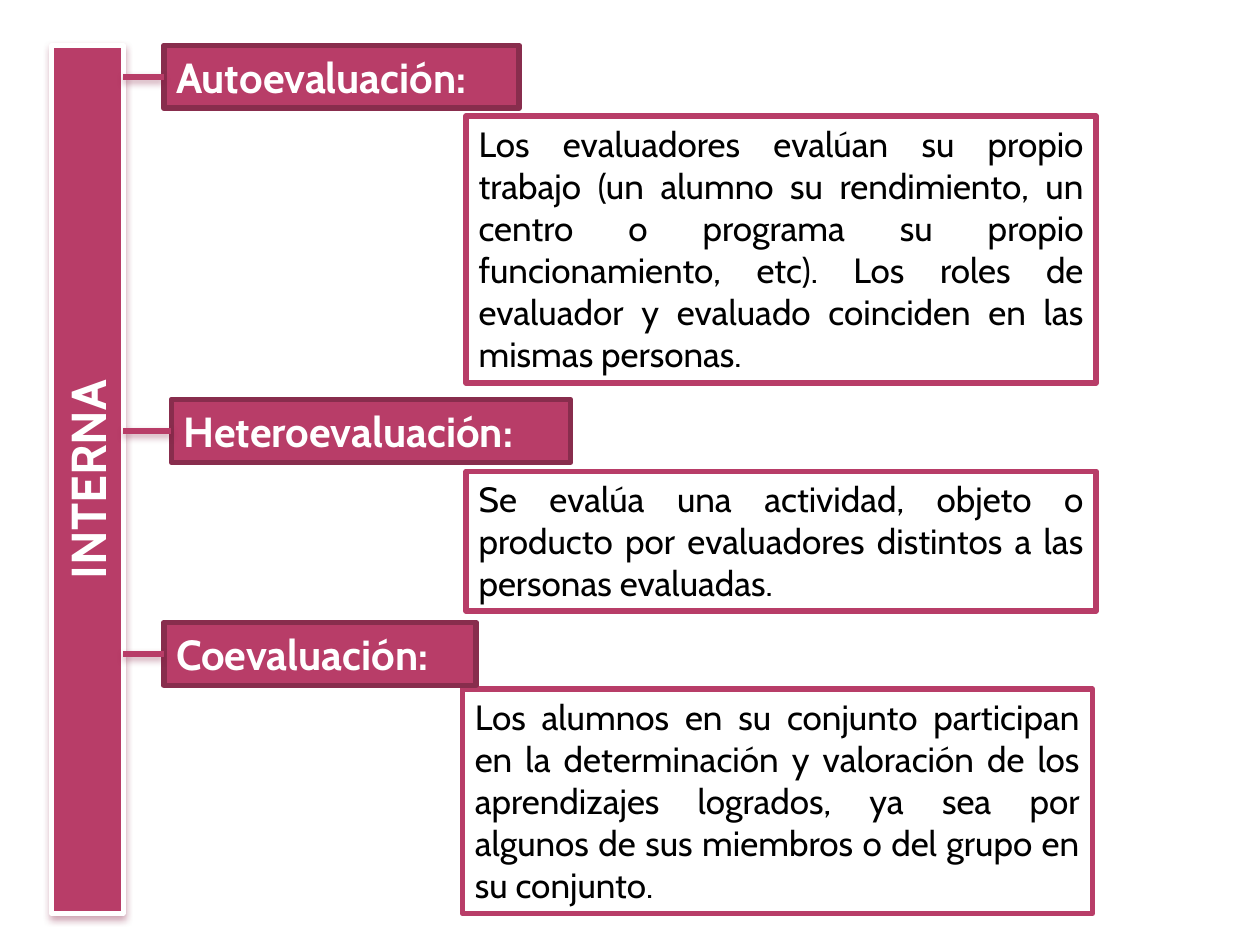
from pptx import Presentation
from pptx.dml.color import RGBColor
from pptx.enum.shapes import MSO_CONNECTOR, MSO_SHAPE
from pptx.enum.text import MSO_ANCHOR, PP_ALIGN
from pptx.oxml import parse_xml
from pptx.oxml.ns import nsdecls
from pptx.util import Inches, Pt

COLORS = {
    "pink": "B83D68",
    "dark pink": "882D4D",
    "shadow": "7F1238",
    "white": "FFFFFF",
    "black": "000000",
}
LINE_WIDTH = Pt(3.15)
BAR_RIGHT = 0.98

# heading, its left, top, width; explanation, its left, top, height
TYPES = [
    ("Autoevaluación:", 1.3, 0.36, 2.82,
     "Los evaluadores evalúan su propio trabajo (un alumno su rendimiento, "
     "un centro o programa su propio funcionamiento, etc). Los roles de "
     "evaluador y evaluado coinciden en las mismas personas.",
     3.7, 0.92, 2.12),
    ("Heteroevaluación:", 1.36, 3.17, 3.17,
     "Se evalúa una actividad, objeto o producto por evaluadores distintos "
     "a las personas evaluadas.",
     3.7, 3.74, 1.11),
    ("Coevaluación:", 1.3, 4.94, 2.48,
     "Los alumnos en su conjunto participan en la determinación y valoración "
     "de los aprendizajes logrados, ya sea por algunos de sus miembros o del "
     "grupo en su conjunto.",
     3.67, 5.47, 1.78),
]


def add_box(position, text, size, align, fill, line, color, bold=True):
    box = page.shapes.add_shape(MSO_SHAPE.RECTANGLE, *map(Inches, position))
    box.shadow.inherit = False
    box.fill.solid()
    box.fill.fore_color.rgb = RGBColor.from_string(COLORS[fill])
    box.line.color.rgb = RGBColor.from_string(COLORS[line])
    box.line.width = LINE_WIDTH
    frame = box.text_frame
    frame.word_wrap = True
    frame.vertical_anchor = MSO_ANCHOR.TOP
    para = frame.paragraphs[0]
    para.text = text
    para.alignment = align
    para.font.name = "Cabin"
    para.font.size = Pt(size)
    para.font.bold = bold
    para.font.color.rgb = RGBColor.from_string(COLORS[color])
    return box


def add_soft_shadow(shape):
    properties = shape.element.spPr
    for effects in properties.findall("{*}effectLst"):
        properties.remove(effects)
    properties.append(parse_xml(
        f'<a:effectLst {nsdecls("a")}>'
        f'<a:outerShdw blurRad="{Pt(4)}" dist="{Pt(2)}" dir="5400000" rotWithShape="0">'
        f'<a:srgbClr val="{COLORS["shadow"]}"><a:alpha val="38000"/></a:srgbClr>'
        '</a:outerShdw></a:effectLst>'))


deck = Presentation()
deck.slide_width = Inches(10)
deck.slide_height = Inches(7.5)
page = deck.slides.add_slide(deck.slide_layouts[6])

headings = []
for title, left, top, width, detail, detail_left, detail_top, detail_height in TYPES:
    add_box((detail_left, detail_top, 5, detail_height), detail, 20,
            PP_ALIGN.JUSTIFY, "white", "pink", "black", bold=False)
    headings.append(add_box((left, top, width, 0.5), title, 24,
                            PP_ALIGN.LEFT, "pink", "dark pink", "white"))

bar = add_box((-2.75, 3.52, 6.89, 0.57), "INTERNA", 28,
              PP_ALIGN.CENTER, "pink", "white", "white")
bar.rotation = 270
bar.line.width = Pt(2.5)
add_soft_shadow(bar)

for heading in headings:
    middle = heading.top + heading.height // 2
    link = page.shapes.add_connector(
        MSO_CONNECTOR.STRAIGHT, Inches(BAR_RIGHT), middle, heading.left, middle)
    link.end_connect(heading, 1)
    link.line.color.rgb = RGBColor.from_string(COLORS["pink"])
    link.line.width = LINE_WIDTH
    add_soft_shadow(link)

deck.save("out.pptx")
